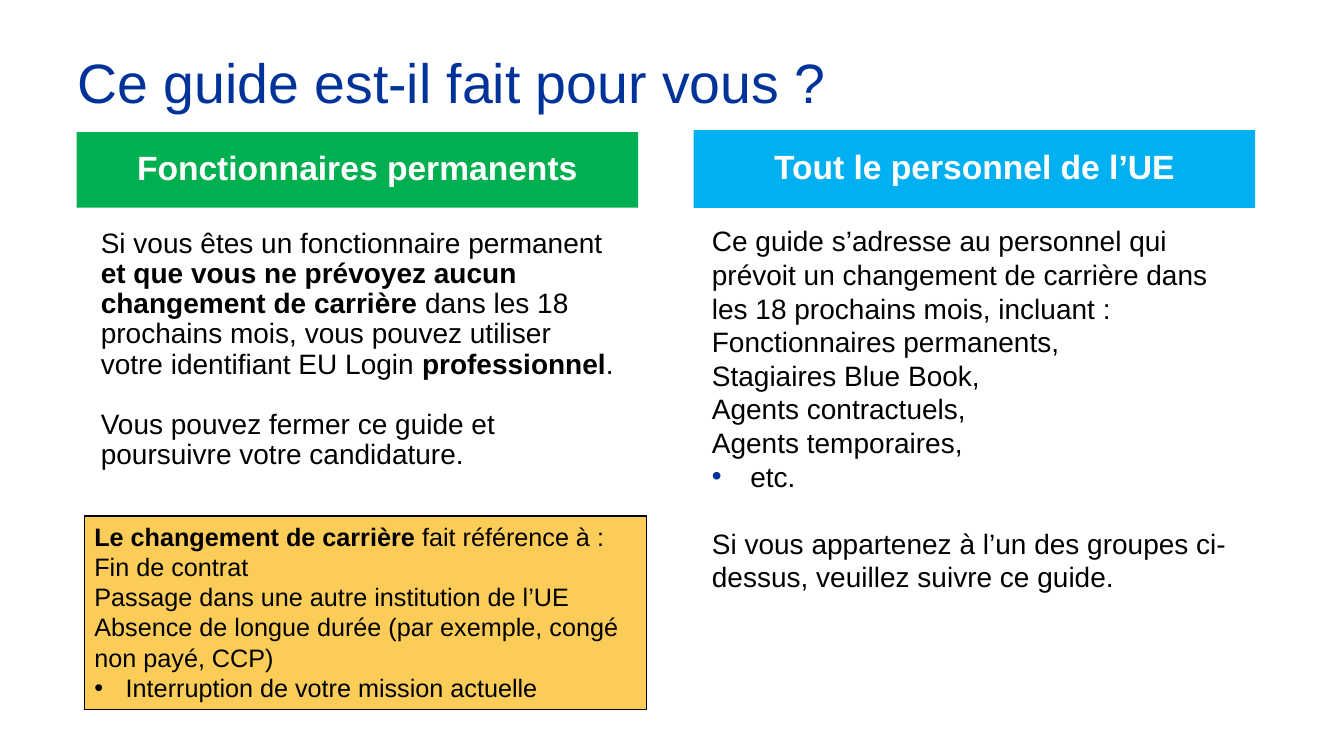
from lxml import etree
from pptx import Presentation
from pptx.dml.color import RGBColor
from pptx.enum.shapes import MSO_SHAPE
from pptx.enum.text import MSO_ANCHOR, MSO_AUTO_SIZE, PP_ALIGN
from pptx.oxml.ns import qn
from pptx.util import Cm, Pt

RECTANGLE = MSO_SHAPE.RECTANGLE
TOP, MIDDLE = MSO_ANCHOR.TOP, MSO_ANCHOR.MIDDLE
LEFT, CENTER = PP_ALIGN.LEFT, PP_ALIGN.CENTER
NO_AUTOFIT = MSO_AUTO_SIZE.NONE

COLORS = {
    "navy": "003399",
    "green": "00B050",
    "sky": "00B0F0",
    "amber": "FBCD58",
    "black": "000000",
    "white": "FFFFFF",
}


class GuideSlide:
    """Holds the style and the current slide; ** marks bold text, a leading • a bullet."""

    font = "Arial"

    def __init__(self, presentation, layout_index):
        self.slide = presentation.slides.add_slide(presentation.slide_layouts[layout_index])

    def color(self, name):
        return RGBColor.from_string(COLORS[name])

    def place(self, idx, box):
        holder = self.slide.placeholders[idx]
        holder.left, holder.top, holder.width, holder.height = (Cm(v) for v in box)
        return holder

    def fill(self, shape, name):
        shape.fill.solid()
        shape.fill.fore_color.rgb = self.color(name)

    def set_frame(self, frame, anchor, insets):
        frame.word_wrap = True
        frame.auto_size = NO_AUTOFIT
        frame.vertical_anchor = anchor
        frame.margin_left = frame.margin_right = Cm(insets[0])
        frame.margin_top = frame.margin_bottom = Cm(insets[1])

    def set_bullet(self, paragraph, bulleted, indent, color):
        props = paragraph._p.get_or_add_pPr()
        hang = Cm(indent) if bulleted else 0
        props.set("marL", str(int(hang)))
        props.set("indent", str(int(-hang)))
        if not bulleted:
            etree.SubElement(props, qn("a:buNone"))
            return
        bullet_color = etree.SubElement(props, qn("a:buClr"))
        etree.SubElement(bullet_color, qn("a:srgbClr"), val=COLORS[color])
        etree.SubElement(props, qn("a:buFont"), typeface=self.font)
        etree.SubElement(props, qn("a:buChar"), char="•")

    def set_lines(self, frame, lines, size, color="black", bold=False, align=LEFT,
                  spacing=1.0, gaps=None, indent=0, bullet_color="black"):
        for number, line in enumerate(lines):
            paragraph = frame.paragraphs[0] if number == 0 else frame.add_paragraph()
            self.set_bullet(paragraph, line.startswith("•"), indent, bullet_color)
            paragraph.alignment = align
            paragraph.line_spacing = spacing
            paragraph.space_before = Pt((gaps or {}).get(number, 0))
            paragraph.space_after = Pt(0)
            for part, words in enumerate(line.lstrip("•").split("**")):
                if not words:
                    continue
                run = paragraph.add_run()
                run.text = words
                run.font.name = self.font
                run.font.size = Pt(size)
                run.font.bold = bold or part % 2 == 1
                run.font.color.rgb = self.color(color)

    def title(self, text, box):
        frame = self.place(0, box).text_frame
        self.set_frame(frame, MIDDLE, (0.25, 0.13))
        self.set_lines(frame, [text], 39.6, "navy", spacing=0.9)

    def heading(self, idx, text, box, fill):
        banner = self.place(idx, box)
        self.fill(banner, fill)
        self.set_frame(banner.text_frame, MIDDLE, (0.2, 0.2))
        self.set_lines(banner.text_frame, [text], 24, "white", True, CENTER, 0.9)

    def body(self, idx, lines, box, **style):
        frame = self.place(idx, box).text_frame
        self.set_frame(frame, TOP, (0.41, 0.41))
        self.set_lines(frame, lines, 20, **style)

    def note(self, lines, box, fill):
        panel = self.slide.shapes.add_shape(RECTANGLE, *(Cm(v) for v in box))
        panel.shadow.inherit = False
        self.fill(panel, fill)
        panel.line.color.rgb = self.color("black")
        panel.line.width = Pt(1)
        self.set_frame(panel.text_frame, TOP, (0.25, 0.13))
        self.set_lines(panel.text_frame, lines, 18, indent=0.79)


def main():
    presentation = Presentation()
    presentation.slide_width, presentation.slide_height = Cm(33.87), Cm(19.05)
    guide = GuideSlide(presentation, 4)  # comparison layout

    guide.title("Ce guide est-il fait pour vous ?", (1.7, 1.02, 20.65, 2.26))

    # Left column: permanent officials
    guide.heading(1, "Fonctionnaires permanents", (1.93, 3.33, 14.15, 1.9), "green")
    guide.body(2, [
        "Si vous êtes un fonctionnaire permanent **et que vous ne prévoyez aucun "
        "changement de carrière **dans les 18 prochains mois, vous pouvez utiliser "
        "votre identifiant EU Login **professionnel**.",
        "Vous pouvez fermer ce guide et poursuivre votre candidature.",
    ], (2.13, 5.36, 13.94, 7.04), spacing=0.9, gaps={1: 21.6})

    # Right column: all staff
    guide.heading(3, "Tout le personnel de l’UE", (17.48, 3.28, 14.15, 1.96), "sky")
    guide.body(4, [
        "Ce guide s’adresse au personnel qui prévoit un changement de carrière dans "
        "les 18 prochains mois, incluant :",
        "Fonctionnaires permanents,",
        "Stagiaires Blue Book,",
        "Agents contractuels,",
        "Agents temporaires,",
        "•etc.",
        "Si vous appartenez à l’un des groupes ci-dessus, veuillez suivre ce guide.",
    ], (17.53, 5.23, 14.12, 12.17), gaps={6: 24}, indent=0.97, bullet_color="navy")

    # Definition of a career change
    guide.note([
        "**Le changement de carrière **fait référence à :",
        "Fin de contrat",
        "Passage dans une autre institution de l’UE",
        "Absence de longue durée (par exemple, congé non payé, CCP)",
        "•Interruption de votre mission actuelle",
    ], (2.13, 13, 14.17, 4.88), "amber")

    presentation.save("out.pptx")


if __name__ == "__main__":
    main()
